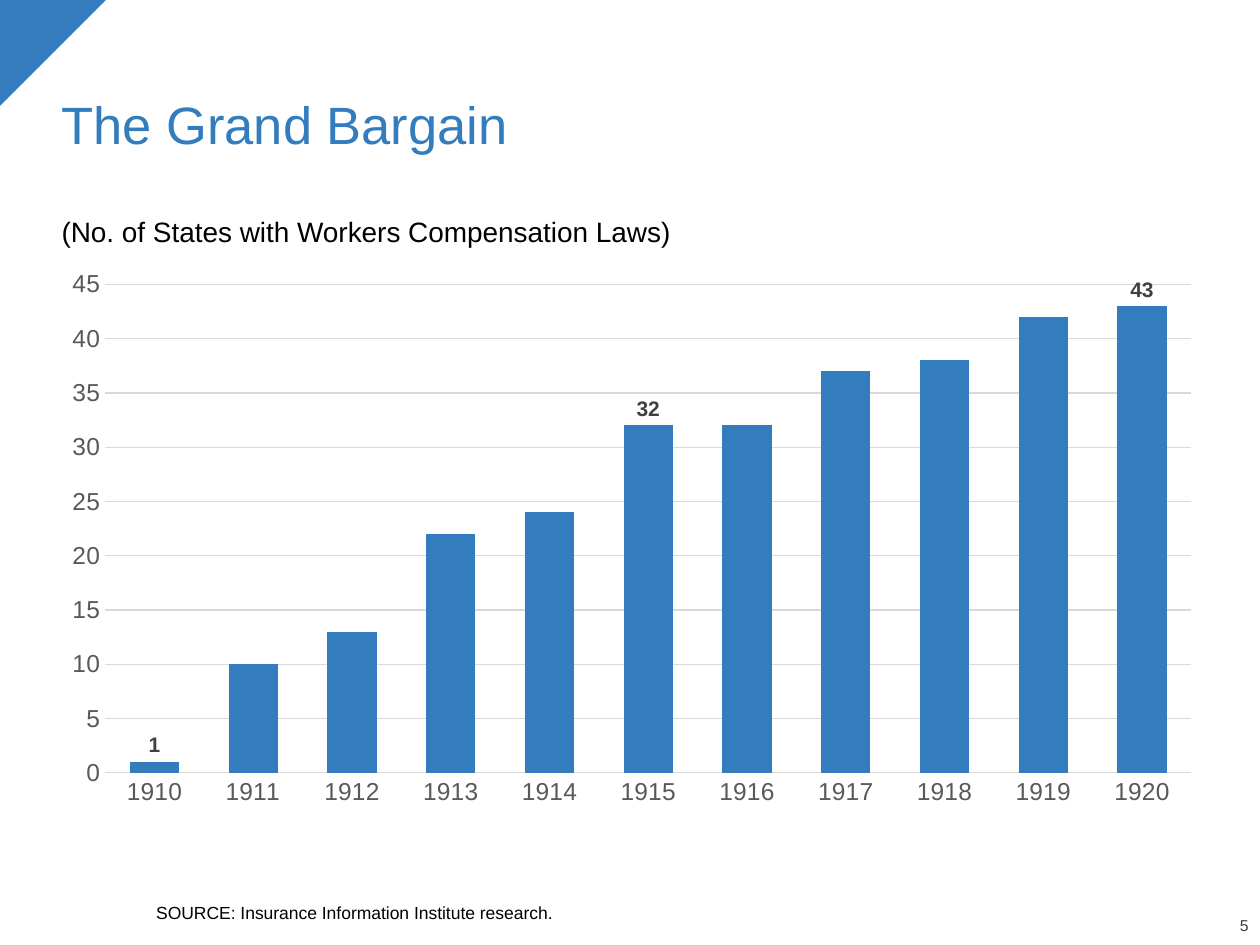
import pptx
import pptx.chart.data
import pptx.dml.color
import pptx.enum.chart
import pptx.enum.shapes
import pptx.enum.text
import pptx.util
from pptx.util import Inches

BLUE, GREY, RULE = "337DBE", "595959", "D9D9D9"
ALIGN = pptx.enum.text.PP_ALIGN
ANCHOR = pptx.enum.text.MSO_ANCHOR


def color(value):
    return pptx.dml.color.RGBColor.from_string(value)


def add_text(text, left, top, width, height, size, ink="000000",
             anchor=ANCHOR.BOTTOM, align=ALIGN.LEFT, inset=(0, 0)):
    """Add a one-paragraph text box; inset is (horizontal, vertical) in inches."""
    box = slide.shapes.add_textbox(Inches(left), Inches(top), Inches(width), Inches(height))
    frame = box.text_frame
    frame.word_wrap = True
    frame.vertical_anchor = anchor
    frame.margin_left = frame.margin_right = Inches(inset[0])
    frame.margin_top = frame.margin_bottom = Inches(inset[1])
    paragraph = frame.paragraphs[0]
    paragraph.text = text
    paragraph.alignment = align
    paragraph.line_spacing = 0.9
    paragraph.font.name = "Arial"
    paragraph.font.size = pptx.util.Pt(size)
    paragraph.font.color.rgb = color(ink)


deck = pptx.Presentation()
deck.slide_width, deck.slide_height = Inches(10), Inches(7.5)
slide = deck.slides.add_slide(deck.slide_layouts[6])

corner = slide.shapes.add_shape(pptx.enum.shapes.MSO_SHAPE.RIGHT_TRIANGLE,
                                0, 0, Inches(0.84), Inches(0.84))
corner.rotation = 90
corner.shadow.inherit = False
corner.fill.solid()
corner.fill.fore_color.rgb = color(BLUE)
corner.line.fill.background()

add_text("5", 9.43, 7.29, 0.48, 0.13, 9, ink="404040", align=ALIGN.RIGHT)
add_text("The Grand Bargain", 0.39, 0.25, 9.25, 1.04, 30, ink=BLUE, inset=(0.1, 0.05))

states = pptx.chart.data.CategoryChartData()
states.categories = [str(year) for year in range(1910, 1921)]
states.add_series("Series 1", [1, 10, 13, 22, 24, 32, 32, 37, 38, 42, 43])
chart = slide.shapes.add_chart(pptx.enum.chart.XL_CHART_TYPE.COLUMN_CLUSTERED, Inches(0.39),
                               Inches(2.06), Inches(9.25), Inches(4.42), states).chart
chart.has_legend = False
chart.has_title = False
chart.font.name = "Arial"
chart.font.size = pptx.util.Pt(10)

for axis in (chart.category_axis, chart.value_axis):
    axis.major_tick_mark = axis.minor_tick_mark = pptx.enum.chart.XL_TICK_MARK.NONE
    axis.tick_labels.font.name = "Arial"
    axis.tick_labels.font.size = pptx.util.Pt(14)
    axis.tick_labels.font.color.rgb = color(GREY)

chart.value_axis.minimum_scale = 0
chart.value_axis.maximum_scale = 45
chart.value_axis.major_unit = 5
chart.value_axis.format.line.fill.background()
for rule in (chart.category_axis.format.line, chart.value_axis.major_gridlines.format.line):
    rule.color.rgb = color(RULE)
    rule.width = pptx.util.Pt(0.75)

plot = chart.plots[0]
plot.gap_width = 100
plot.vary_by_categories = False
laws = plot.series[0]
laws.format.fill.solid()
laws.format.fill.fore_color.rgb = color(BLUE)
laws.data_labels.show_value = False
for labelled in (0, 5, 10):
    label = laws.points[labelled].data_label
    label.font.name = "Arial"
    label.font.size = pptx.util.Pt(12)
    label.font.bold = True
    label.font.color.rgb = color("404040")
    label.position = pptx.enum.chart.XL_LABEL_POSITION.OUTSIDE_END

add_text("SOURCE: Insurance Information Institute research.", 1.24, 6.88, 8.4, 0.45, 10)
add_text("(No. of States with Workers Compensation Laws)", 0.39, 1.68, 5.27, 0.38, 16,
         anchor=ANCHOR.TOP, inset=(0.1, 0.05))

deck.save("out.pptx")
